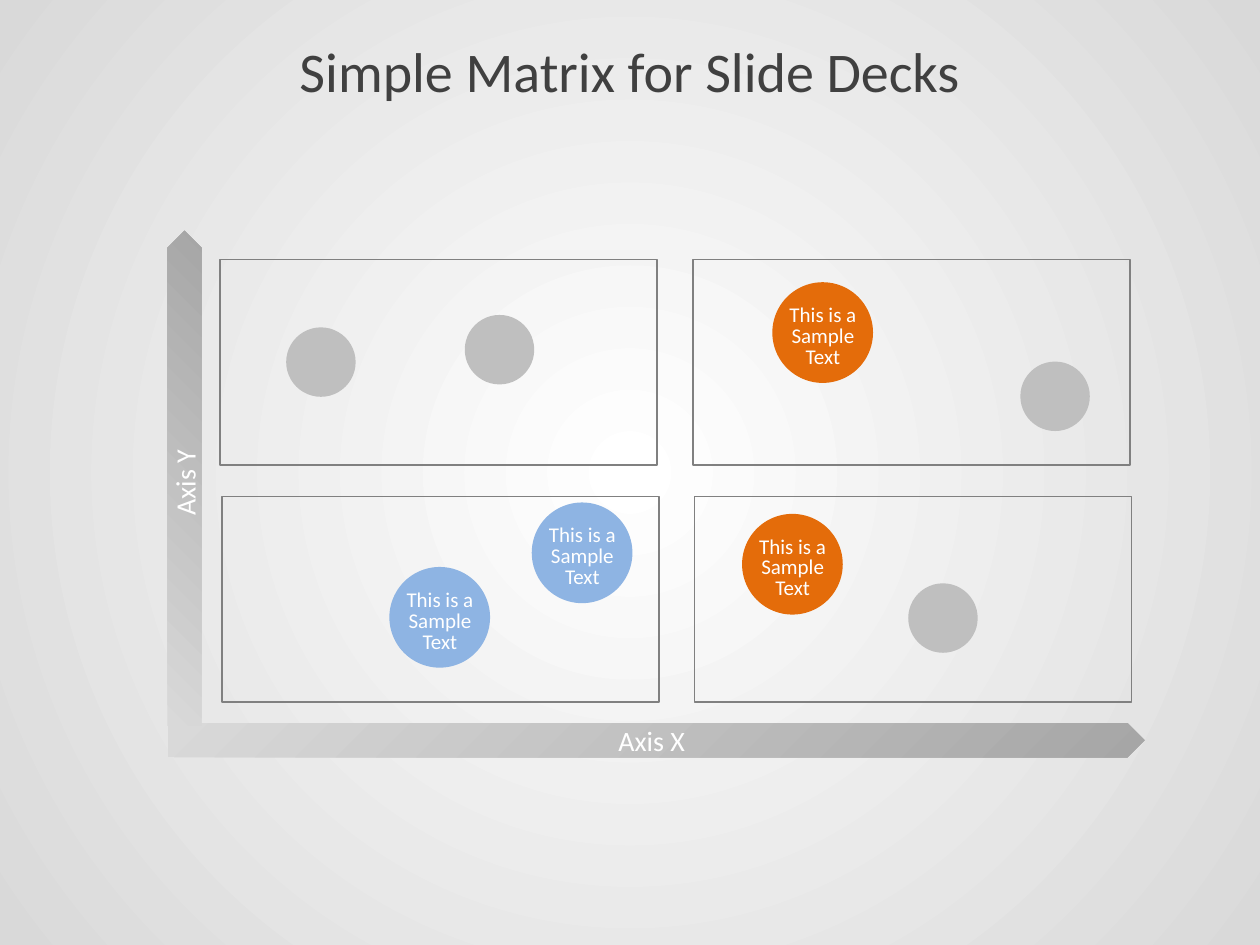
"""Build a two-by-two matrix slide with bubbles and two axis arrows."""
import pptx
import pptx.util
import pptx.dml.color
import pptx.enum.shapes
import pptx.enum.text
import pptx.oxml
import pptx.oxml.ns

Cm, Pt = pptx.util.Cm, pptx.util.Pt
Kind = pptx.enum.shapes.MSO_SHAPE
Text = pptx.enum.text
tint = {
    name: pptx.dml.color.RGBColor.from_string(code)
    for name, code in {
        "white": "FFFFFF", "pale": "D9D9D9", "mid": "A6A6A6", "dot": "BFBFBF",
        "edge": "808080", "title": "404040", "blue": "8EB4E3", "orange": "E46C0A",
    }.items()
}


def shade(fill, start, end):
    fill.gradient()
    for stop, name in zip(fill.gradient_stops, (start, end)):
        stop.color.rgb = tint[name]


def write(shape, words, size, color):
    frame = shape.text_frame
    frame.word_wrap = True
    frame.vertical_anchor = Text.MSO_ANCHOR.MIDDLE
    line = frame.paragraphs[0]
    line.text = words
    line.alignment = Text.PP_ALIGN.CENTER
    line.font.name = "Calibri"
    line.font.size = Pt(size)
    line.font.color.rgb = tint[color]
    return line


deck = pptx.Presentation()
deck.slide_width, deck.slide_height = Cm(25.4), Cm(19.05)
slide = deck.slides.add_slide(deck.slide_layouts[6])
shapes = slide.shapes

back = slide.background.fill
shade(back, "white", "pale")
lin = next(slide.element.iter(pptx.oxml.ns.qn("a:lin")))
lin.getparent().replace(lin, pptx.oxml.parse_xml(
    f'<a:path {pptx.oxml.ns.nsdecls("a")} path="circle">'
    '<a:fillToRect l="50000" t="50000" r="50000" b="50000"/></a:path>'))

title = shapes.add_textbox(Cm(1.27), Cm(0.43), Cm(22.86), Cm(1.98))
write(title, "Simple Matrix for Slide Decks", 32, "title")

for row in range(2):
    for col in range(2):
        left, top = 4.44 + 9.53 * col + 0.03 * row, 5.23 + 4.78 * row
        cell = shapes.add_shape(Kind.RECTANGLE, Cm(left), Cm(top), Cm(8.81), Cm(4.14))
        cell.shadow.inherit = False
        cell.fill.background()
        cell.line.color.rgb = tint["edge"]
        cell.line.width = Pt(1)

for words, left, top, width, turn in (
    ("Axis X", 3.38, 14.58, 19.69, 0),
    ("Axis Y", -1.27, 9.3, 9.98, 270),
):
    axis = shapes.add_shape(Kind.PENTAGON, Cm(left), Cm(top), Cm(width), Cm(0.69))
    axis.rotation = turn
    axis.shadow.inherit = False
    axis.line.fill.background()
    shade(axis.fill, "pale", "mid")
    axis.fill.gradient_angle = 315
    write(axis, words, 16, "white")

for left, top in ((5.77, 6.6), (9.37, 6.35), (20.57, 7.29), (18.31, 11.76)):
    dot = shapes.add_shape(Kind.OVAL, Cm(left), Cm(top), Cm(1.4), Cm(1.4))
    dot.shadow.inherit = False
    dot.line.fill.background()
    dot.fill.solid()
    dot.fill.fore_color.rgb = tint["dot"]

for left, top, color in (
    (7.85, 11.43, "blue"),
    (10.72, 10.13, "blue"),
    (15.57, 5.69, "orange"),
    (14.96, 10.36, "orange"),
):
    group = shapes.add_group_shape().shapes
    disc = group.add_shape(Kind.OVAL, Cm(left), Cm(top), Cm(2.03), Cm(2.03))
    disc.shadow.inherit = False
    disc.line.fill.background()
    disc.fill.solid()
    disc.fill.fore_color.rgb = tint[color]
    label = group.add_textbox(Cm(left + 0.07), Cm(top + 0.33), Cm(1.9), Cm(1.55))
    write(label, "This is a Sample Text", 12, "white").line_spacing = Pt(12)
    label.text_frame.auto_size = Text.MSO_AUTO_SIZE.SHAPE_TO_FIT_TEXT

deck.save("out.pptx")
